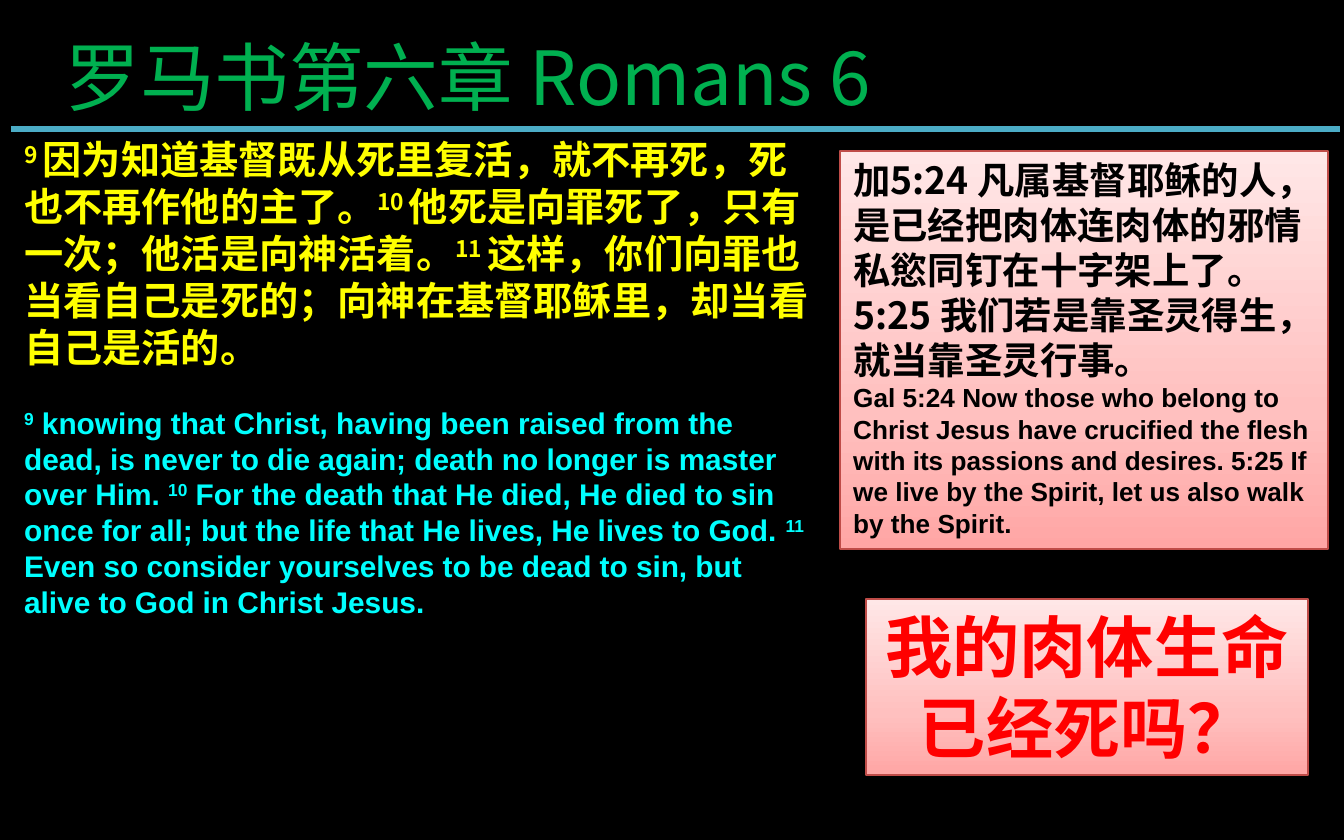
from dataclasses import dataclass
from typing import NamedTuple

import lxml.etree
import pptx
import pptx.dml.color
import pptx.enum.shapes
import pptx.enum.text
import pptx.oxml.ns
import pptx.util

EMU_PER_PX = 914400 / 134.4
ALIGN = pptx.enum.text.PP_ALIGN
qn = pptx.oxml.ns.qn


@dataclass(frozen=True)
class Theme:
    background: str = "000000"
    title: str = "00B050"
    rule: str = "4BACC6"
    chinese_verse: str = "FFFF00"
    english_verse: str = "00FFFF"
    note: str = "000000"
    question: str = "FF0000"
    card_border: str = "BF4C48"
    card_stops: tuple = ((0, "FFA6A5"), (0.35, "FFC0BF"), (1, "FFE7E7"))
    chinese_font: str = "Noto Sans CJK SC"
    english_font: str = "Arial"
    title_size: int = 40
    chinese_size: int = 21
    english_size: int = 16
    note_chinese_size: int = 20
    note_english_size: int = 14
    question_size: int = 36


THEME = Theme()


class Box(NamedTuple):
    left: int
    top: int
    width: int
    height: int


class Span(NamedTuple):
    text: str
    raised: bool = False


@dataclass(frozen=True)
class Passage:
    spans: tuple[Span, ...]
    size: int
    font: str
    color: str
    bold: bool = True
    align: ALIGN = ALIGN.LEFT
    space_before: int = 0


@dataclass(frozen=True)
class Card:
    box: Box
    passages: tuple[Passage, ...]


TITLE = Passage((Span("罗马书第六章 Romans 6"),), THEME.title_size,
                THEME.chinese_font, THEME.title, bold=False)

VERSES = (
    Passage((
        Span("9 ", True), Span("因为知道基督既从死里复活，就不再死，死也不再作他的主了。"),
        Span("10 ", True), Span("他死是向罪死了，只有一次；他活是向神活着。"),
        Span("11 ", True), Span("这样，你们向罪也当看自己是死的；向神在基督耶稣里，却当看自己是活的。"),
    ), THEME.chinese_size, THEME.chinese_font, THEME.chinese_verse),
    Passage((
        Span("9", True),
        Span(" knowing that Christ, having been raised from the dead, is never to die again; "
             "death no longer is master over Him. "),
        Span("10", True),
        Span(" For the death that He died, He died to sin once for all; "
             "but the life that He lives, He lives to God. "),
        Span("11", True),
        Span(" Even so consider yourselves to be dead to sin, but alive to God in Christ Jesus."),
    ), THEME.english_size, THEME.english_font, THEME.english_verse, space_before=18),
)

CARDS = (
    Card(Box(840, 151, 488, 398), (
        Passage((Span("加5:24 凡属基督耶稣的人，是已经把肉体连肉体的邪情私慾同钉在十字架上了。"
                      "5:25 我们若是靠圣灵得生，就当靠圣灵行事。"),),
                THEME.note_chinese_size, THEME.chinese_font, THEME.note),
        Passage((Span("Gal 5:24 Now those who belong to Christ Jesus have crucified the flesh "
                      "with its passions and desires. 5:25 If we live by the Spirit, "
                      "let us also walk by the Spirit."),),
                THEME.note_english_size, THEME.english_font, THEME.note),
    )),
    Card(Box(866, 599, 442, 176), (
        Passage((Span("我的肉体生命已经死吗？"),), THEME.question_size,
                THEME.chinese_font, THEME.question, align=ALIGN.CENTER),
    )),
)


def px(length: int) -> int:
    return round(length * EMU_PER_PX)


def rgb(color: str) -> pptx.dml.color.RGBColor:
    return pptx.dml.color.RGBColor.from_string(color)


def write(frame, passages: tuple[Passage, ...], wrap: bool = True) -> None:
    frame.word_wrap = wrap
    frame.auto_size = pptx.enum.text.MSO_AUTO_SIZE.SHAPE_TO_FIT_TEXT
    frame.vertical_anchor = pptx.enum.text.MSO_ANCHOR.TOP
    for index, passage in enumerate(passages):
        paragraph = frame.add_paragraph() if index else frame.paragraphs[0]
        paragraph.alignment = passage.align
        paragraph.space_before = pptx.util.Pt(passage.space_before)
        font = paragraph.font
        font.size = pptx.util.Pt(passage.size)
        font.bold = passage.bold
        font.color.rgb = rgb(passage.color)
        font.name = passage.font
        defaults = paragraph._p.pPr.find(qn("a:defRPr"))
        lxml.etree.SubElement(defaults, qn("a:ea"), typeface=passage.font)
        for span in passage.spans:
            run = paragraph.add_run()
            run.text = span.text
            if span.raised:
                run._r.get_or_add_rPr().set("baseline", "30000")


def fill_gradient(shape, stops: tuple) -> None:
    """Fill from the bottom edge up through any number of colour stops."""
    shape.fill.gradient()
    shape.fill.gradient_angle = 90
    stop_list = shape._element.spPr.find(qn("a:gradFill")).find(qn("a:gsLst"))
    for stop in list(stop_list):
        stop_list.remove(stop)
    for position, color in stops:
        stop = lxml.etree.SubElement(stop_list, qn("a:gs"), pos=str(round(position * 100000)))
        lxml.etree.SubElement(stop, qn("a:srgbClr"), val=color)


def draw_title(slide) -> None:
    title = slide.shapes.title
    title.left, title.top, title.width, title.height = map(px, Box(52, 24, 857, 103))
    write(title.text_frame, (TITLE,), wrap=False)


def draw_rule(slide) -> None:
    rule = slide.shapes.add_connector(
        pptx.enum.shapes.MSO_CONNECTOR.STRAIGHT, px(11), px(129), px(1340), px(129))
    rule.line.color.rgb = rgb(THEME.rule)
    rule.line.width = pptx.util.Pt(3)
    lxml.etree.SubElement(rule._element.spPr, qn("a:effectLst"))


def draw_card(slide, card: Card) -> None:
    panel = slide.shapes.add_shape(
        pptx.enum.shapes.MSO_SHAPE.RECTANGLE, *map(px, card.box))
    panel.shadow.inherit = False
    fill_gradient(panel, THEME.card_stops)
    panel.line.color.rgb = rgb(THEME.card_border)
    panel.line.width = pptx.util.Pt(0.75)
    write(panel.text_frame, card.passages)


def main() -> None:
    deck = pptx.Presentation()
    deck.slide_width, deck.slide_height = px(1344), px(840)
    slide = deck.slides.add_slide(deck.slide_layouts.get_by_name("Title Only"))
    slide.background.fill.solid()
    slide.background.fill.fore_color.rgb = rgb(THEME.background)

    draw_title(slide)
    draw_rule(slide)
    verses = slide.shapes.add_textbox(*map(px, Box(11, 129, 817, 601)))
    write(verses.text_frame, VERSES)
    for card in CARDS:
        draw_card(slide, card)
    deck.save("out.pptx")


if __name__ == "__main__":
    main()
